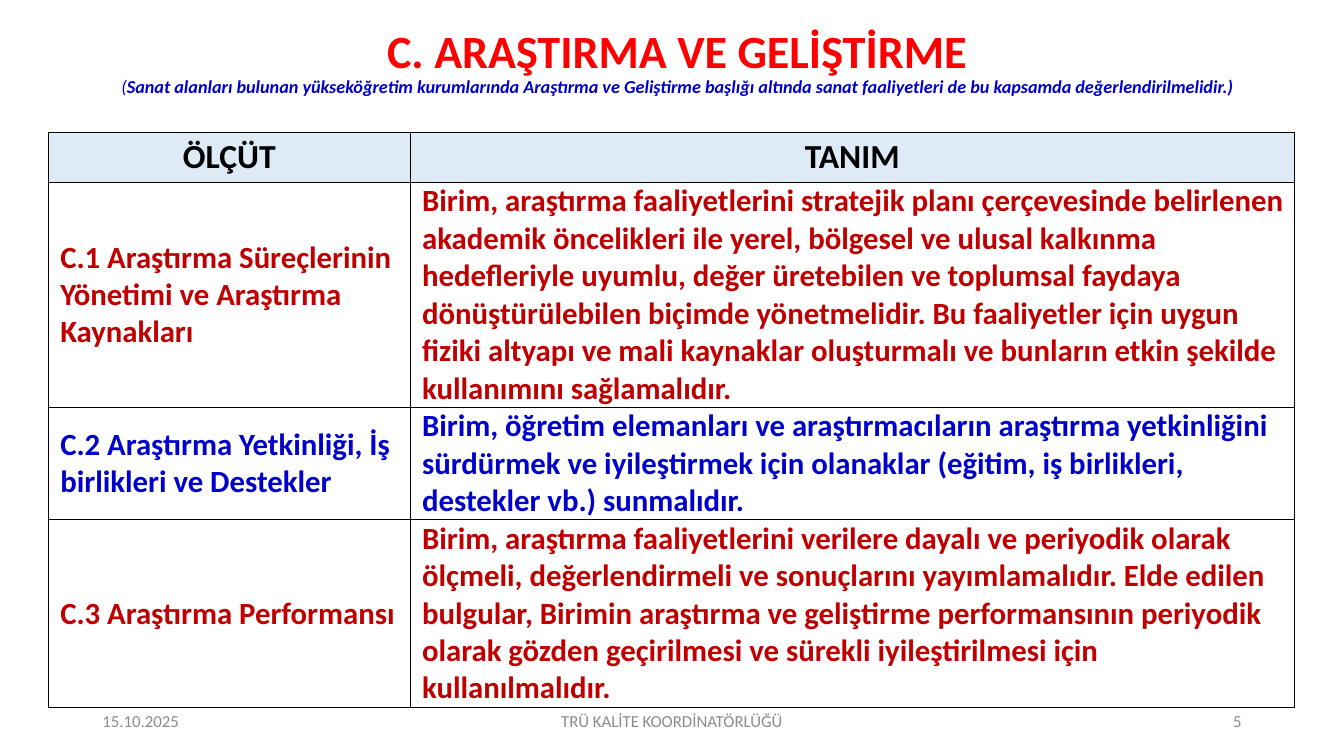
from lxml.etree import SubElement
from pptx import Presentation
from pptx.dml.color import RGBColor
from pptx.enum.text import MSO_ANCHOR, MSO_AUTO_SIZE, PP_ALIGN
from pptx.oxml.ns import qn
from pptx.util import Cm, Pt

RED = RGBColor(0xFF, 0, 0)
DARK = RGBColor(0xC0, 0, 0)
BLUE = RGBColor(0, 0, 0xCC)
BLACK = RGBColor(0, 0, 0)
GREY = RGBColor(0x8C, 0x8C, 0x8C)
PALE = RGBColor(0xDE, 0xEB, 0xF7)

HEAD = ("ÖLÇÜT", "TANIM")
ROWS = [
    (DARK, "C.1 Araştırma Süreçlerinin Yönetimi ve Araştırma Kaynakları",
     "Birim, araştırma faaliyetlerini stratejik planı çerçevesinde belirlenen "
     "akademik öncelikleri ile yerel, bölgesel ve ulusal kalkınma hedefleriyle "
     "uyumlu, değer üretebilen ve toplumsal faydaya dönüştürülebilen biçimde "
     "yönetmelidir. Bu faaliyetler için uygun fiziki altyapı ve mali kaynaklar "
     "oluşturmalı ve bunların etkin şekilde kullanımını sağlamalıdır."),
    (BLUE, "C.2 Araştırma Yetkinliği, İş birlikleri ve Destekler",
     "Birim, öğretim elemanları ve araştırmacıların araştırma yetkinliğini "
     "sürdürmek ve iyileştirmek için olanaklar (eğitim, iş birlikleri, "
     "destekler vb.) sunmalıdır."),
    (DARK, "C.3 Araştırma Performansı",
     "Birim, araştırma faaliyetlerini verilere dayalı ve periyodik olarak "
     "ölçmeli, değerlendirmeli ve sonuçlarını yayımlamalıdır. Elde edilen "
     "bulgular, Birimin araştırma ve geliştirme performansının periyodik "
     "olarak gözden geçirilmesi ve sürekli iyileştirilmesi için "
     "kullanılmalıdır."),
]
WIDTHS = (9.12, 22.28)
HEIGHTS = (1.27, 5.36, 2.74, 4.17)
FOOT = [
    (2.33, 7.62, PP_ALIGN.LEFT, "15.10.2025"),
    (11.22, 11.43, PP_ALIGN.CENTER, "TRÜ KALİTE KOORDİNATÖRLÜĞÜ"),
    (23.92, 7.62, PP_ALIGN.RIGHT, "5"),
]


def assign(item, values):
    for name, value in values.items():
        setattr(item, name, value)


def add_run(para, text, size, color, **style):
    run = para.add_run()
    run.text = text
    assign(run.font, {"name": "Calibri", "size": Pt(size), **style})
    run.font.color.rgb = color


def add_break(para, size):
    """Add a line break that has its own text size."""
    para.add_line_break()
    mark = para._p.findall(qn("a:br"))[-1]
    SubElement(mark, qn("a:rPr"), sz=str(size * 100))


def set_title(shape):
    assign(shape, {"left": Cm(2.46), "top": Cm(0.48),
                   "width": Cm(29.21), "height": Cm(2.21)})
    frame = shape.text_frame
    assign(frame, {"word_wrap": True, "auto_size": MSO_AUTO_SIZE.NONE,
                   "vertical_anchor": MSO_ANCHOR.MIDDLE})
    para = frame.paragraphs[0]
    assign(para, {"alignment": PP_ALIGN.CENTER, "line_spacing": 0.9})
    add_run(para, "C. ARAŞTIRMA VE GELİŞTİRME", 33, RED, bold=True)
    add_break(para, 33)
    add_run(para, "(", 13, BLUE, bold=False, italic=True)
    add_run(para, "Sanat alanları bulunan yükseköğretim kurumlarında Araştırma "
            "ve Geliştirme başlığı altında sanat faaliyetleri de bu kapsamda "
            "değerlendirilmelidir.)", 13, BLUE, bold=True, italic=True)


def add_edges(cell):
    props = cell._tc.get_or_add_tcPr()
    for place, side in enumerate(("lnL", "lnR", "lnT", "lnB")):
        line = props.makeelement(qn(f"a:{side}"), {"w": str(Pt(1))})
        fill = SubElement(line, qn("a:solidFill"))
        SubElement(fill, qn("a:srgbClr"), val=str(BLACK))
        props.insert(place, line)


def fill_cell(cell, text, size, color, head=False):
    assign(cell, {"margin_left": Cm(0.1), "margin_right": Cm(0.1),
                  "margin_top": 0, "margin_bottom": 0,
                  "vertical_anchor": MSO_ANCHOR.MIDDLE})
    para = cell.text_frame.paragraphs[0]
    if head:
        cell.fill.solid()
        cell.fill.fore_color.rgb = PALE
        para.alignment = PP_ALIGN.CENTER
    else:
        cell.fill.background()
        para.space_after = Pt(4)
        assign_indent(para, Cm(0.2))
    add_run(para, text, size, color, bold=True)
    add_edges(cell)


def assign_indent(para, left):
    props = para._p.get_or_add_pPr()
    props.set("marL", str(left))
    props.set("indent", "0")


def add_grid(slide):
    frame = slide.shapes.add_table(len(HEIGHTS), len(WIDTHS), Cm(1.22), Cm(3.33),
                                   Cm(sum(WIDTHS)), Cm(sum(HEIGHTS)))
    table = frame.table
    assign(table, {"first_row": False, "horz_banding": False})
    for col, width in zip(table.columns, WIDTHS):
        col.width = Cm(width)
    for row, height in zip(table.rows, HEIGHTS):
        row.height = Cm(height)
    for col, text in enumerate(HEAD):
        fill_cell(table.cell(0, col), text, 24, BLACK, head=True)
    for row, (color, *texts) in enumerate(ROWS, 1):
        for col, text in enumerate(texts):
            fill_cell(table.cell(row, col), text, 22, color)


def add_foot(slide, left, width, align, text):
    box = slide.shapes.add_textbox(Cm(left), Cm(17.65), Cm(width), Cm(1.02))
    frame = box.text_frame
    assign(frame, {"word_wrap": True, "vertical_anchor": MSO_ANCHOR.MIDDLE})
    para = frame.paragraphs[0]
    para.alignment = align
    add_run(para, text, 12, GREY)


def main():
    deck = Presentation()
    assign(deck, {"slide_width": Cm(33.87), "slide_height": Cm(19.05)})
    slide = deck.slides.add_slide(deck.slide_layouts[5])
    set_title(slide.shapes.title)
    add_grid(slide)
    for foot in FOOT:
        add_foot(slide, *foot)
    deck.save("out.pptx")


if __name__ == "__main__":
    main()
